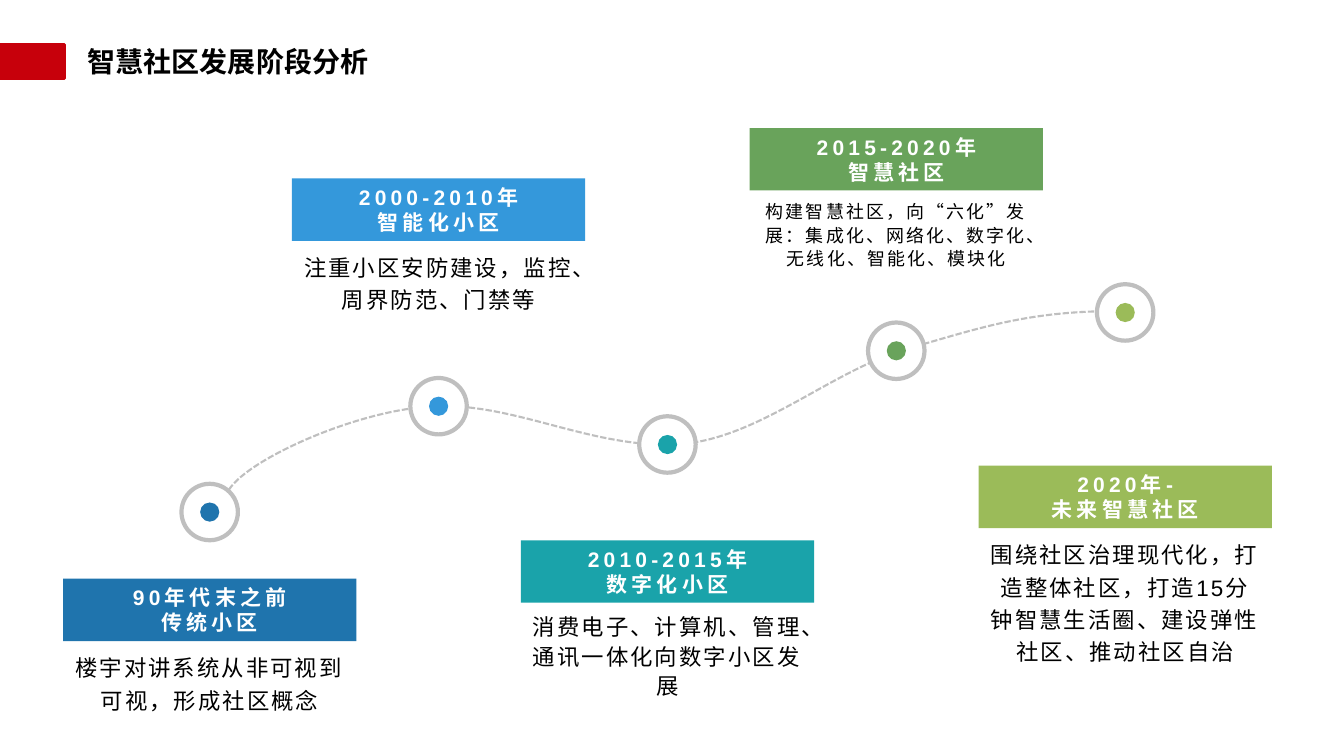
from dataclasses import dataclass

import lxml.etree
import pptx
import pptx.dml.color
import pptx.enum.dml
import pptx.enum.shapes
import pptx.enum.text
import pptx.oxml.ns
import pptx.shapes.autoshape
import pptx.slide
import pptx.text.text
import pptx.util

Inches = pptx.util.Inches
Pt = pptx.util.Pt
RGBColor = pptx.dml.color.RGBColor
Shapes = pptx.enum.shapes.MSO_SHAPE
Align = pptx.enum.text.PP_ALIGN
Anchor = pptx.enum.text.MSO_ANCHOR
qn = pptx.oxml.ns.qn

RED = RGBColor(0xC7, 0x00, 0x0B)
BLACK = RGBColor(0x00, 0x00, 0x00)
WHITE = RGBColor(0xFF, 0xFF, 0xFF)
GREY = RGBColor(0xBF, 0xBF, 0xBF)
NAVY = RGBColor(0x1F, 0x74, 0xAD)
BLUE = RGBColor(0x34, 0x98, 0xDB)
TEAL = RGBColor(0x1A, 0xA3, 0xAA)
GREEN = RGBColor(0x69, 0xA3, 0x5B)
LIME = RGBColor(0x9B, 0xBB, 0x59)

FIRST_CENTRE = 2.08
STAGE_PITCH = 2.27
CARD_WIDTH = 2.91
BANNER_HEIGHT = 0.62
BODY_OFFSET = 0.65
RING_SIZE = 0.56
DOT_SIZE = 0.19

CURVE_UNIT = Inches(0.01)
CURVE_START = (227, 486)
CURVE_POINTS = [
    (246, 455), (362, 403), (438, 403),
    (514, 402), (587, 444), (669, 441),
    (750, 438), (823, 368), (900, 346),
    (977, 324), (1026, 306), (1129, 309),
]


@dataclass(frozen=True)
class Stage:
    period: str
    name: str
    summary: str
    color: RGBColor
    node_y: float
    banner_top: float
    summary_height: float = 1
    summary_size: float = 16
    line_spacing: float = 1.2


STAGES = [
    Stage("90年代末之前", "传统小区", "楼宇对讲系统从非可视到可视，形成社区概念",
          NAVY, 5.08, 5.74),
    Stage("2000-2010年", "智能化小区", "注重小区安防建设，监控、周界防范、门禁等",
          BLUE, 4.03, 1.77),
    Stage("2010-2015年", "数字化小区", "消费电子、计算机、管理、通讯一体化向数字小区发展",
          TEAL, 4.41, 5.36, line_spacing=1.1),
    Stage("2015-2020年", "智慧社区",
          "构建智慧社区，向“六化”发展：集成化、网络化、数字化、无线化、智能化、模块化",
          GREEN, 3.48, 1.27, summary_size=12.8, line_spacing=1.1),
    Stage("2020年-", "未来智慧社区",
          "围绕社区治理现代化，打造整体社区，打造15分钟智慧生活圈、建设弹性社区、推动社区自治",
          LIME, 3.1, 4.62, summary_height=1.46),
]


def format_paragraph(paragraph: pptx.text.text._Paragraph, size: float, color: RGBColor,
                     bold: bool = False, tracking: float = 0, font_name: str = "Arial",
                     align: Align = Align.CENTER) -> None:
    paragraph.alignment = align
    font = paragraph.font
    font.name = font_name
    font.size = Pt(size)
    font.bold = bold
    font.color.rgb = color
    if tracking:
        paragraph._p.pPr.find(qn("a:defRPr")).set("spc", str(round(tracking * 100)))


def add_filled(slide: pptx.slide.Slide, kind: Shapes, left: float, top: float, width: float,
               height: float, fill: RGBColor, line: RGBColor | None = None,
               line_width: float = 0) -> pptx.shapes.autoshape.Shape:
    shape = slide.shapes.add_shape(kind, Inches(left), Inches(top), Inches(width), Inches(height))
    shape.shadow.inherit = False
    shape.fill.solid()
    shape.fill.fore_color.rgb = fill
    if line is None:
        shape.line.fill.background()
    else:
        shape.line.color.rgb = line
        shape.line.width = Pt(line_width)
    return shape


def add_title(slide: pptx.slide.Slide) -> None:
    add_filled(slide, Shapes.RECTANGLE, 0, 0.44, 0.64, 0.34, RED, RED, 2)
    title = slide.shapes.title
    title.left, title.top, title.width, title.height = map(Inches, (0.77, 0.39, 7.01, 0.44))
    title.text_frame.text = "智慧社区发展阶段分析"
    title.text_frame.vertical_anchor = Anchor.MIDDLE
    title.text_frame.auto_size = pptx.enum.text.MSO_AUTO_SIZE.NONE
    format_paragraph(title.text_frame.paragraphs[0], 20, BLACK, bold=True,
                     font_name="Noto Sans CJK SC", align=Align.LEFT)


def add_timeline(slide: pptx.slide.Slide) -> None:
    builder = slide.shapes.build_freeform(*CURVE_START, scale=CURVE_UNIT)
    builder.add_line_segments(CURVE_POINTS, close=False)
    timeline = builder.convert_to_shape()
    segments = timeline._element.findall(".//" + qn("a:lnTo"))
    for first in range(0, len(segments), 3):
        curve = lxml.etree.Element(qn("a:cubicBezTo"))
        segments[first].addprevious(curve)
        for segment in segments[first:first + 3]:
            curve.append(segment[0])
            segment.getparent().remove(segment)
    timeline.shadow.inherit = False
    timeline.fill.background()
    timeline.line.color.rgb = GREY
    timeline.line.width = Pt(1.5)
    timeline.line.dash_style = pptx.enum.dml.MSO_LINE.SQUARE_DOT


def add_node(slide: pptx.slide.Slide, stage: Stage, centre: float) -> None:
    for size, fill, line in ((RING_SIZE, WHITE, GREY), (DOT_SIZE, stage.color, None)):
        add_filled(slide, Shapes.OVAL, centre - size / 2, stage.node_y - size / 2,
                   size, size, fill, line, 3)


def add_card(slide: pptx.slide.Slide, stage: Stage, centre: float) -> None:
    left = centre - CARD_WIDTH / 2
    banner = add_filled(slide, Shapes.RECTANGLE, left, stage.banner_top,
                        CARD_WIDTH, BANNER_HEIGHT, stage.color)
    banner.text_frame.text = f"{stage.period}\n{stage.name}"
    banner.text_frame.vertical_anchor = Anchor.MIDDLE
    for paragraph in banner.text_frame.paragraphs:
        format_paragraph(paragraph, 15, WHITE, bold=True, tracking=3)

    summary = slide.shapes.add_textbox(
        Inches(left), Inches(stage.banner_top + BODY_OFFSET),
        Inches(CARD_WIDTH), Inches(stage.summary_height)).text_frame
    summary.word_wrap = True
    summary.text = stage.summary
    summary.paragraphs[0].line_spacing = stage.line_spacing
    format_paragraph(summary.paragraphs[0], stage.summary_size, BLACK, tracking=1.5)


def main() -> None:
    deck = pptx.Presentation()
    deck.slide_width, deck.slide_height = Inches(13.33), Inches(7.5)
    slide = deck.slides.add_slide(deck.slide_layouts.get_by_name("Title Only"))
    add_title(slide)
    add_timeline(slide)
    for index, stage in enumerate(STAGES):
        centre = FIRST_CENTRE + index * STAGE_PITCH
        add_node(slide, stage, centre)
        add_card(slide, stage, centre)
    deck.save("out.pptx")


if __name__ == "__main__":
    main()
